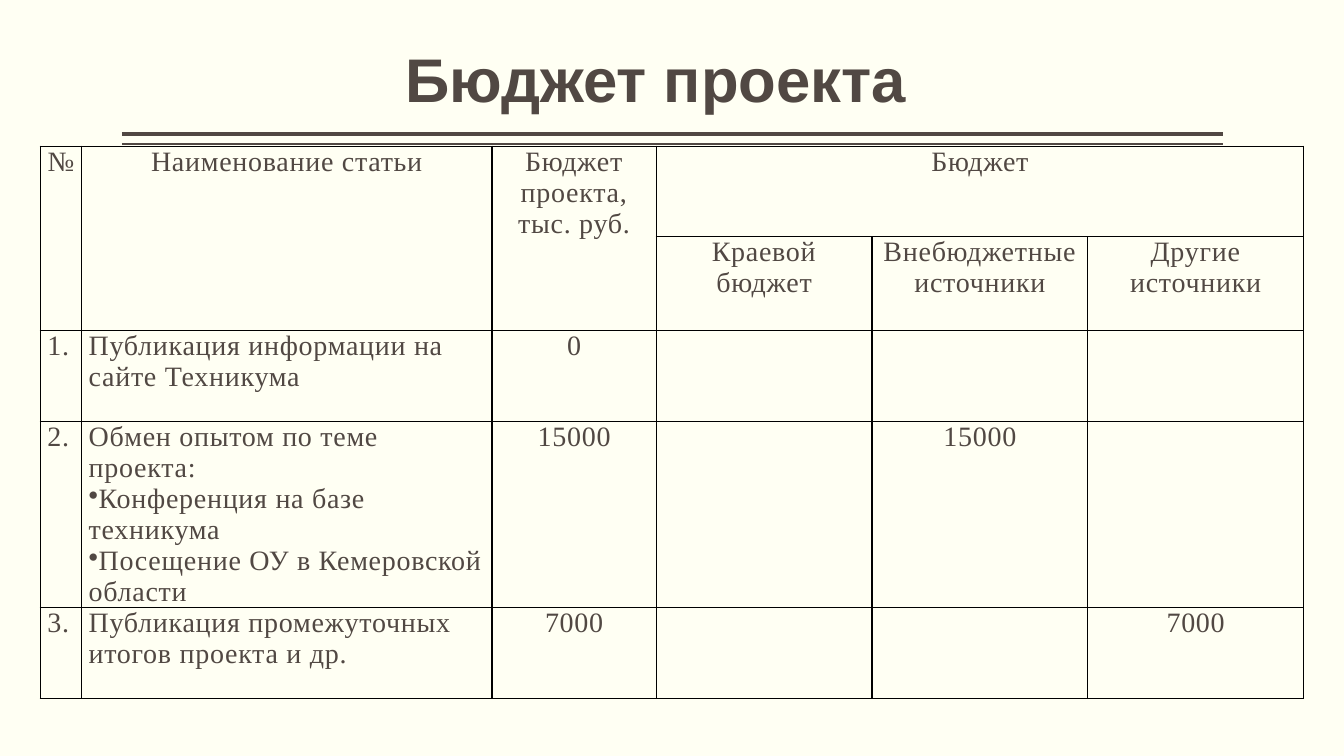
from lxml import etree
from pptx import Presentation
from pptx import util as u
from pptx.dml.color import RGBColor
from pptx.enum import shapes, text
from pptx.oxml import ns

COLORS = {"paper": "FFFFF3", "ink": "514843", "grid": "000000"}
BULLET = "•"
COLUMNS = [0.41, 4.07, 1.63, 2.14, 2.14, 2.14]
ROWS = [0.9, 0.93, 0.9, 1.85, 0.9]
LEFT_COLUMNS = (0, 1)
HEADER_ROWS = 2
MERGES = [((0, 0), (1, 0)), ((0, 1), (1, 1)), ((0, 2), (1, 2)), ((0, 3), (0, 5))]
BUDGET = [
    ["№", "Наименование статьи", "Бюджет проекта, тыс. руб.", "Бюджет", "", ""],
    ["", "", "", "Краевой бюджет", "Внебюджетные источники", "Другие источники"],
    ["1.", "Публикация информации на сайте Техникума", "0", "", "", ""],
    ["2.", "Обмен опытом по теме проекта:\n•Конференция на базе техникума\n"
     "•Посещение ОУ в Кемеровской области", "15000", "", "15000", ""],
    ["3.", "Публикация промежуточных итогов проекта и др.", "7000", "", "", "7000"],
]


def color(name):
    return RGBColor.from_string(COLORS[name])


def add_xml(parent, tag, **attributes):
    return etree.SubElement(parent, ns.qn(tag), attributes)


def write(frame, content, size, font, bold=False, align=text.PP_ALIGN.CENTER,
          line_spacing=None, tracking=0):
    """Fill a frame, one paragraph a line; a leading bullet sign becomes a real bullet."""
    frame.word_wrap = True
    for number, line in enumerate(content.split("\n")):
        para = frame.add_paragraph() if number else frame.paragraphs[0]
        para.alignment = align
        if line_spacing:
            para.line_spacing = line_spacing
        if line.startswith(BULLET):
            add_xml(para._p.get_or_add_pPr(), "a:buChar", char=BULLET)
        span = para.add_run()
        span.text = line.removeprefix(BULLET)
        span.font.size = u.Pt(size)
        span.font.name = font
        span.font.bold = bold
        span.font.color.rgb = color("ink")
        if tracking:
            span._r.get_or_add_rPr().set("spc", str(int(tracking * 100)))


def add_title(page, left, top, width, height):
    title = page.shapes.title
    title.left, title.top = u.Inches(left), u.Inches(top)
    title.width, title.height = u.Inches(width), u.Inches(height)
    frame = title.text_frame
    frame.margin_left = frame.margin_right = 0
    frame.margin_top = frame.margin_bottom = u.Inches(0.05)
    frame.vertical_anchor = text.MSO_ANCHOR.BOTTOM
    write(frame, "Бюджет проекта", 44, "Arial", bold=True, line_spacing=0.9)


def add_double_rule(page, left, top, width, gap):
    for offset, weight in ((0, 3), (gap, 1)):
        y = u.Inches(top + offset)
        rule = page.shapes.add_connector(
            shapes.MSO_CONNECTOR.STRAIGHT, u.Inches(left), y, u.Inches(left + width), y)
        rule.line.color.rgb = color("ink")
        rule.line.width = u.Pt(weight)
        add_xml(rule._element.spPr, "a:effectLst")


def format_cell(cell):
    cell.margin_left = cell.margin_right = u.Inches(0.07)
    cell.margin_top = cell.margin_bottom = 0
    properties = cell._tc.get_or_add_tcPr()
    for side in ("a:lnL", "a:lnR", "a:lnT", "a:lnB"):
        border = add_xml(properties, side, w=str(u.Pt(1)))
        fill = add_xml(border, "a:solidFill")
        add_xml(fill, "a:srgbClr", val=COLORS["grid"])
    cell.fill.background()


def add_budget_table(page, left, top):
    table = page.shapes.add_table(
        len(ROWS), len(COLUMNS), u.Inches(left), u.Inches(top),
        u.Inches(sum(COLUMNS)), u.Inches(sum(ROWS))).table
    table.first_row = table.horz_banding = False
    for column, width in zip(table.columns, COLUMNS):
        column.width = u.Inches(width)
    for row, height in zip(table.rows, ROWS):
        row.height = u.Inches(height)
    for r, entries in enumerate(BUDGET):
        for c, entry in enumerate(entries):
            cell = table.cell(r, c)
            format_cell(cell)
            if entry:
                is_left = r >= HEADER_ROWS and c in LEFT_COLUMNS
                align = text.PP_ALIGN.LEFT if is_left else text.PP_ALIGN.CENTER
                write(cell.text_frame, entry, 20, "Times New Roman",
                      align=align, tracking=0.5)
    for first, last in MERGES:
        table.cell(*first).merge(table.cell(*last))


def main():
    deck = Presentation()
    deck.slide_width, deck.slide_height = u.Inches(13.33), u.Inches(7.5)
    page = deck.slides.add_slide(deck.slide_layouts.get_by_name("Title Only"))
    page.background.fill.solid()
    page.background.fill.fore_color.rgb = color("paper")
    add_double_rule(page, 1.21, 1.33, 10.92, 0.1)
    add_title(page, 1.05, 0, 10.91, 1.2)
    add_budget_table(page, 0.4, 1.45)
    deck.save("out.pptx")


if __name__ == "__main__":
    main()
